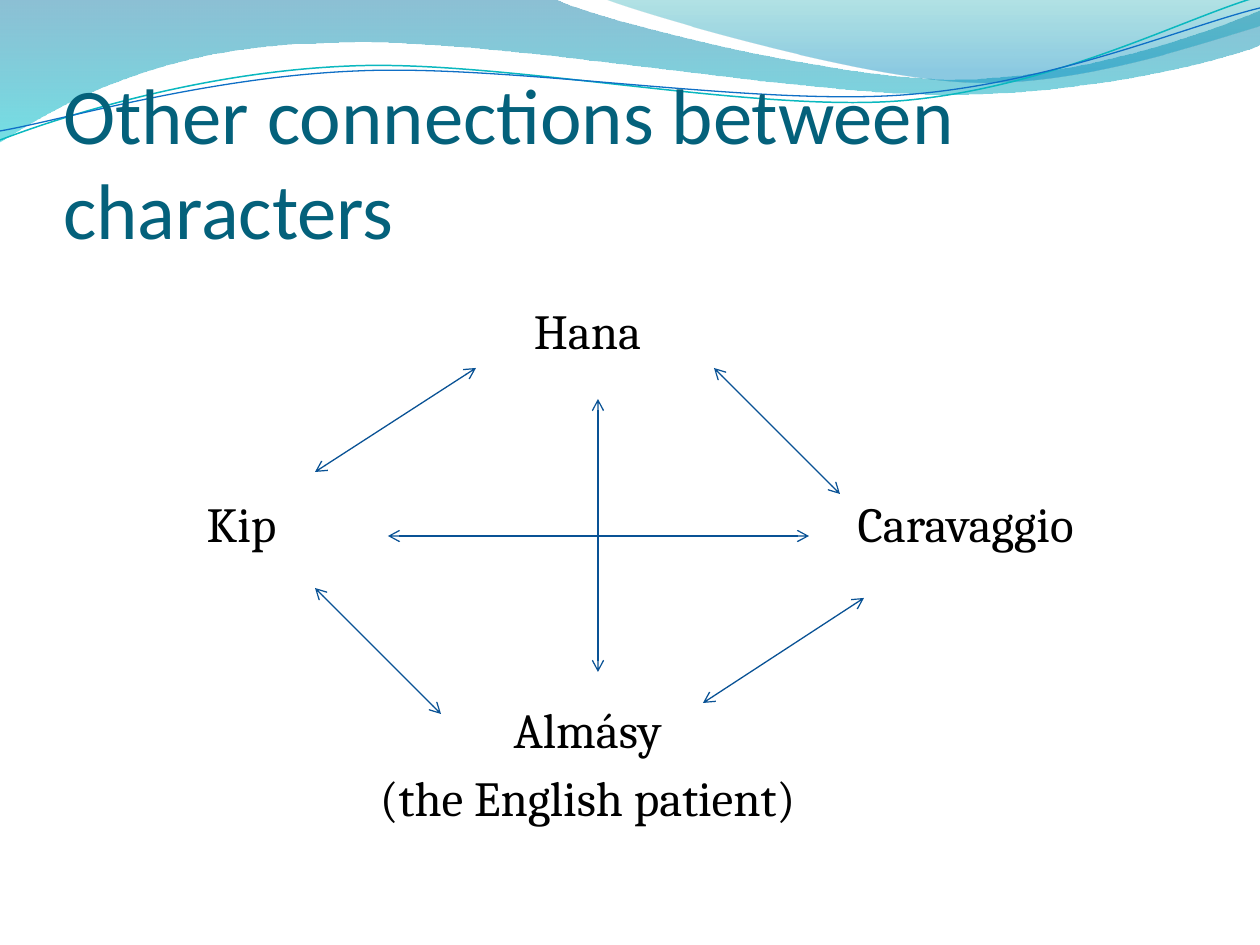
import lxml.etree
import pptx
import pptx.dml.color
import pptx.enum.shapes
import pptx.enum.text
import pptx.oxml.ns
import pptx.util

PX = 914400 / 126
COLORS = {
    "title": "04617B", "text": "000000", "arrow": "095295",
    "wave_top": "0074A1", "wave_bottom": "00C6CF",
    "crest_top": "00A1A9", "crest_bottom": "008BBF",
    "teal_line": "0AB8BF", "blue_line": "0F6FC6",
}
RGB = {part: pptx.dml.color.RGBColor.from_string(code) for part, code in COLORS.items()}
qn = pptx.oxml.ns.qn


def draw_path(shapes, start, segments, close):
    """Draw segments of one point (straight) or three points (cubic curve), in px."""
    points = [(round(x * PX), round(y * PX)) for x, y in [start, *sum(segments, [])]]
    builder = shapes.build_freeform(*points[0])
    builder.add_line_segments(points[1:], close=close)
    shape = builder.convert_to_shape()
    shape.shadow.inherit = False
    steps = iter(shape._element.findall(f".//{qn('a:lnTo')}"))
    for segment in segments:
        first, *others = [next(steps) for _ in segment]
        if others:
            curve = lxml.etree.Element(qn("a:cubicBezTo"))
            first.addprevious(curve)
            for step in (first, *others):
                curve.append(step[0])
                step.getparent().remove(step)
    return shape


def write_text(box, place, lines, size, font_name, color, paragraph_format):
    box.left, box.top, box.width, box.height = [round(v * PX) for v in place]
    frame = box.text_frame
    frame.word_wrap = True
    frame.text = "\n".join(lines)
    for number, paragraph in enumerate(frame.paragraphs):
        properties = paragraph._p.get_or_add_pPr()
        properties.set("marL", "0")
        properties.set("indent", "0")
        lxml.etree.SubElement(properties, qn("a:buNone"))
        for attribute, value in paragraph_format.items():
            setattr(paragraph, attribute, value)
        paragraph.space_before = pptx.util.Pt(5.6 if number else 0)
        font_format = {"size": pptx.util.Pt(size), "name": font_name}
        for attribute, value in font_format.items():
            setattr(paragraph.font, attribute, value)
        paragraph.font.color.rgb = color


presentation = pptx.Presentation()
presentation.slide_width = round(1260 * PX)
presentation.slide_height = round(945 * PX)
slide = presentation.slides.add_slide(presentation.slide_layouts[1])
shapes = slide.shapes
title, top_character = shapes.title, slide.placeholders[1]

# Waves along the top: start, segments, then (color, position, opacity in %) stops
waves = [
    ((0, 0), [
        [(554, -1)],
        [(600, 21), (837, 79), (955, 79)], [(1075, 79), (1207, 33), (1260, 11)],
        [(1261, 45)],
        [(1239, 55), (1096, 96), (940, 94)], [(784, 94), (481, 35), (324, 43)],
        [(163, 45), (58, 105), (-1, 142)],
    ], [("wave_top", 0, 45), ("wave_bottom", 1, 55)]),
    ((604, -1), [
        [(641, 14), (859, 78), (969, 82)], [(1079, 87), (1211, 40), (1260, 26)],
        [(1260, 0)],
    ], [("crest_top", 0, 30), ("crest_bottom", 0.8, 45)]),
]
for start, segments, stops in waves:
    wave = draw_path(shapes, start, segments, close=True)
    wave.line.fill.background()
    wave.fill.gradient()
    wave.fill.gradient_angle = 270
    for stop, (color, position, opacity) in zip(wave.fill.gradient_stops, stops):
        stop.color.rgb = RGB[color]
        stop.position = position
        code = wave._element.find(f".//{qn('a:srgbClr')}[@val='{COLORS[color]}']")
        lxml.etree.SubElement(code, qn("a:alpha"), val=str(opacity * 1000))

wave_lines = [
    ((0, 140), [[(60, 117), (199, 72), (349, 66)], [(498, 59), (747, 112), (898, 101)],
                [(1050, 89), (1182, 19), (1257, -3)]], "teal_line", 0.85),
    ((0, 131), [[(59, 121), (207, 77), (357, 71)], [(508, 64), (752, 106), (903, 95)],
                [(1053, 84), (1186, 26), (1260, 8)]], "blue_line", 0.75),
]
for start, segments, color, width in wave_lines:
    wave_line = draw_path(shapes, start, segments, close=False)
    wave_line.fill.background()
    wave_line.line.color.rgb = RGB[color]
    wave_line.line.width = pptx.util.Pt(width)

# Title and characters, in front of the waves
for placeholder in (title, top_character):
    placeholder._element.getparent().append(placeholder._element)

write_text(title, (63, 97, 1134, 158), ["Other connections between characters"],
           45, "Calibri", RGB["title"], {"alignment": pptx.enum.text.PP_ALIGN.LEFT})
title_format = {
    "vertical_anchor": pptx.enum.text.MSO_ANCHOR.BOTTOM,
    "margin_left": 0, "margin_right": 0, "margin_bottom": 0,
}
for attribute, value in title_format.items():
    setattr(title.text_frame, attribute, value)

characters = [
    (346, 294, 69, ["Hana"], 1.0),
    (346, 693, 168, ["Almásy", "(the English patient)"], 1.0),
    (0, 494, 69, ["Kip"], 0.9),
    (724, 494, 69, ["Caravaggio"], 0.9),
]
for left, top, height, lines, spacing in characters:
    box = top_character if lines == ["Hana"] else shapes.add_textbox(0, 0, 0, 0)
    write_text(box, (left, top, 483, height), lines, 28, "Cambria", RGB["text"],
               {"alignment": pptx.enum.text.PP_ALIGN.CENTER, "line_spacing": spacing})

# Two-way arrows between the characters
arrows = [
    (315, 472, 476, 368), (703, 703, 864, 598), (840, 494, 714, 368),
    (441, 714, 315, 588), (598, 399, 598, 672), (388, 536, 809, 536),
]
for ends in arrows:
    arrow = shapes.add_connector(pptx.enum.shapes.MSO_CONNECTOR.STRAIGHT,
                                 *[round(v * PX) for v in ends])
    arrow.line.color.rgb = RGB["arrow"]
    arrow.line.width = pptx.util.Pt(0.75)
    for end in ("a:headEnd", "a:tailEnd"):
        lxml.etree.SubElement(arrow.line._get_or_add_ln(), qn(end), type="arrow")
    lxml.etree.SubElement(arrow._element.spPr, qn("a:effectLst"))

presentation.save("out.pptx")
